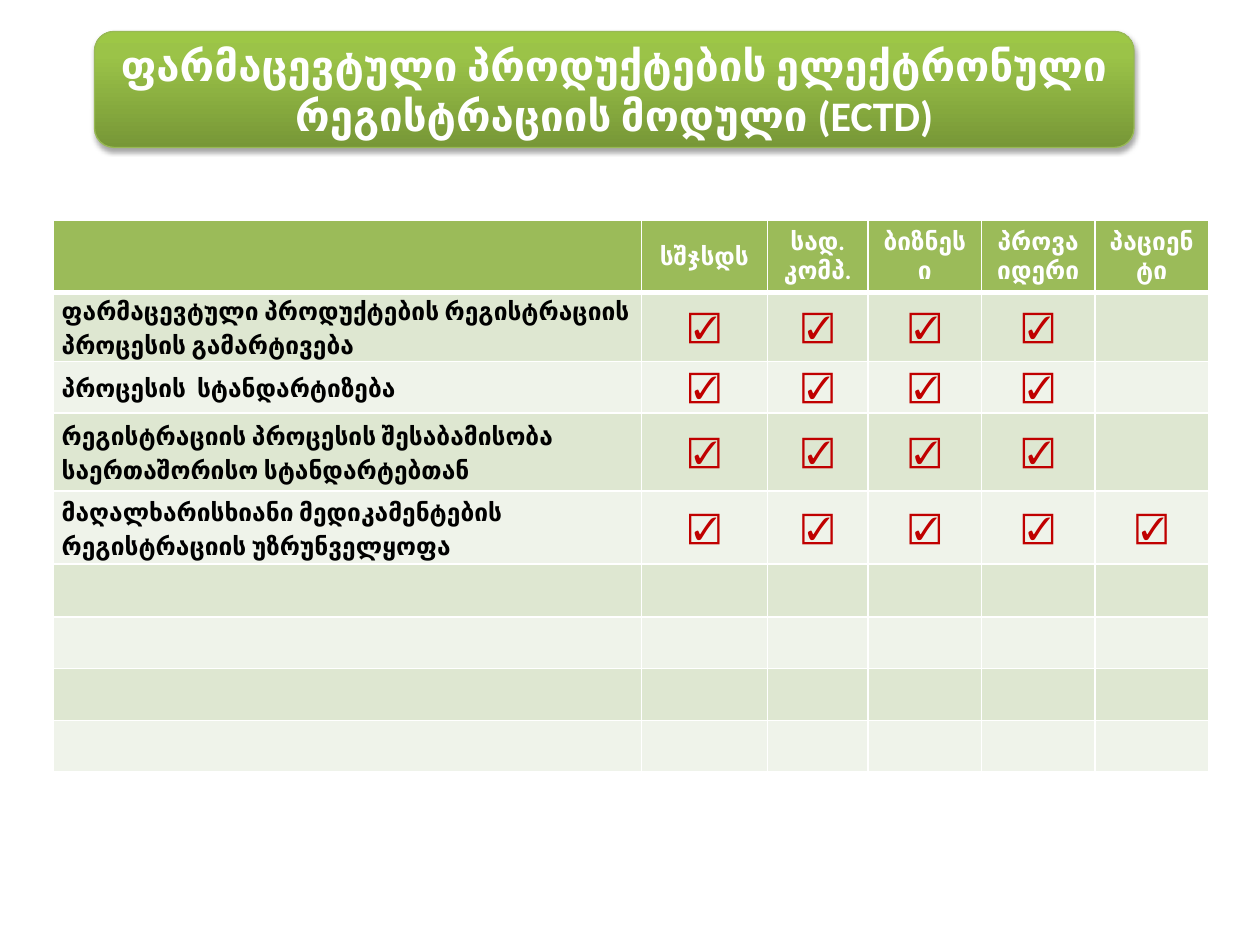
from copy import deepcopy

from lxml import etree
from pptx import Presentation
from pptx.dml.color import RGBColor
from pptx.enum.shapes import MSO_SHAPE as SHAPE
from pptx.enum.text import MSO_ANCHOR as ANCHOR, PP_ALIGN as ALIGN
from pptx.oxml.ns import qn
from pptx.util import Inches, Pt

WHITE, RED, GREEN = "FFFFFF", "C00000", "9BBB59"
BANDS = ("EFF3EA", "DEE7D1")
COL_WIDTHS = (4.67, 1, 0.8, 0.9, 0.9, 0.9)
ROW_HEIGHTS = (0.41, 0.41, 0.41, 0.62, 0.58, 0.42, 0.41, 0.41, 0.41)
HEADERS = ("", "სშჯსდს", "სად. კომპ.", "ბიზნესი", "პროვაიდერი", "პაციენტი")
BENEFITS = (  # benefit, number of parties ticked from the left
    ("ფარმაცევტული პროდუქტების რეგისტრაციის პროცესის გამარტივება", 4),
    ("პროცესის  სტანდარტიზება", 4),
    ("რეგისტრაციის პროცესის შესაბამისობა საერთაშორისო სტანდარტებთან", 4),
    ("მაღალხარისხიანი მედიკამენტების რეგისტრაციის უზრუნველყოფა", 5),
)


def rgb(color):
    return RGBColor.from_string(color)


def write(tf, text, size, color, bold=True, align=ALIGN.CENTER):
    p = tf.paragraphs[0]
    p.text = text
    p.alignment = align
    p.font.name = "Calibri"
    p.font.size = Pt(size)
    p.font.bold = bold
    p.font.color.rgb = rgb(color)
    return p


prs = Presentation()
prs.slide_width, prs.slide_height = Inches(10), Inches(7.5)
s = prs.slides.add_slide(prs.slide_layouts[6])

# Table grid: fills and white borders
table = s.shapes.add_table(
    len(ROW_HEIGHTS), len(COL_WIDTHS), Inches(0.42), Inches(1.75),
    Inches(sum(COL_WIDTHS)), Inches(sum(ROW_HEIGHTS))).table
for column, width in zip(table.columns, COL_WIDTHS):
    column.width = Inches(width)
for i, (row, height) in enumerate(zip(table.rows, ROW_HEIGHTS)):
    row.height = Inches(height)
    for cell in row.cells:
        cell.vertical_anchor = ANCHOR.MIDDLE
        cell.fill.solid()
        cell.fill.fore_color.rgb = rgb(BANDS[i % 2] if i else GREEN)
        tcPr = cell._tc.get_or_add_tcPr()
        for k, side in enumerate(("lnL", "lnR", "lnT", "lnB")):
            header_edge = (i, side) in ((0, "lnB"), (1, "lnT"))
            ln = etree.Element(qn(f"a:{side}"), w=str(Pt(3 if header_edge else 1)))
            fill = etree.SubElement(ln, qn("a:solidFill"))
            etree.SubElement(fill, qn("a:srgbClr"), val=WHITE)
            tcPr.insert(k, ln)

# Table text
for j, header in enumerate(HEADERS):
    if header:
        write(table.cell(0, j).text_frame, header, 14, WHITE)
for i, (benefit, ticks) in enumerate(BENEFITS, start=1):
    cell = table.cell(i, 0)
    cell.margin_left = cell.margin_right = Inches(0.07)
    cell.margin_top = cell.margin_bottom = 0
    p = write(cell.text_frame, benefit, 14, "000000", align=ALIGN.LEFT)
    p.line_spacing = 1.15
    p.space_before = Pt(12)
    for j in range(1, ticks + 1):
        write(table.cell(i, j).text_frame, "☑", 18, RED, bold=False)

# Title banner
banner = s.shapes.add_shape(SHAPE.ROUNDED_RECTANGLE, Inches(0.75), Inches(0.25),
                            Inches(8.25), Inches(0.92))
banner.fill.gradient()
banner.fill.gradient_angle = 90
gs_list = banner._element.spPr.find(qn("a:gradFill")).find(qn("a:gsLst"))
gs_list.append(deepcopy(gs_list[-1]))
stops = ((0, "779737"), (0.8, "9BC348"), (1, "9DC746"))
for stop, (position, color) in zip(banner.fill.gradient_stops, stops):
    stop.position = position
    stop.color.rgb = rgb(color)
banner.line.color.rgb = rgb("98B955")
banner.line.width = Pt(0.75)

banner.shadow.inherit = False
effects = banner._element.spPr.find(qn("a:effectLst"))
shadow = etree.SubElement(effects, qn("a:outerShdw"), blurRad=str(Pt(3.1)),
                          dist=str(Pt(1.8)), dir="5400000", rotWithShape="0")
shade = etree.SubElement(shadow, qn("a:srgbClr"), val="000000")
etree.SubElement(shade, qn("a:alpha"), val="35000")

tf = banner.text_frame
tf.word_wrap = True
tf.vertical_anchor = ANCHOR.MIDDLE
write(tf, "ფარმაცევტული პროდუქტების ელექტრონული რეგისტრაციის მოდული (ECTD)", 24, WHITE)

prs.save("out.pptx")
